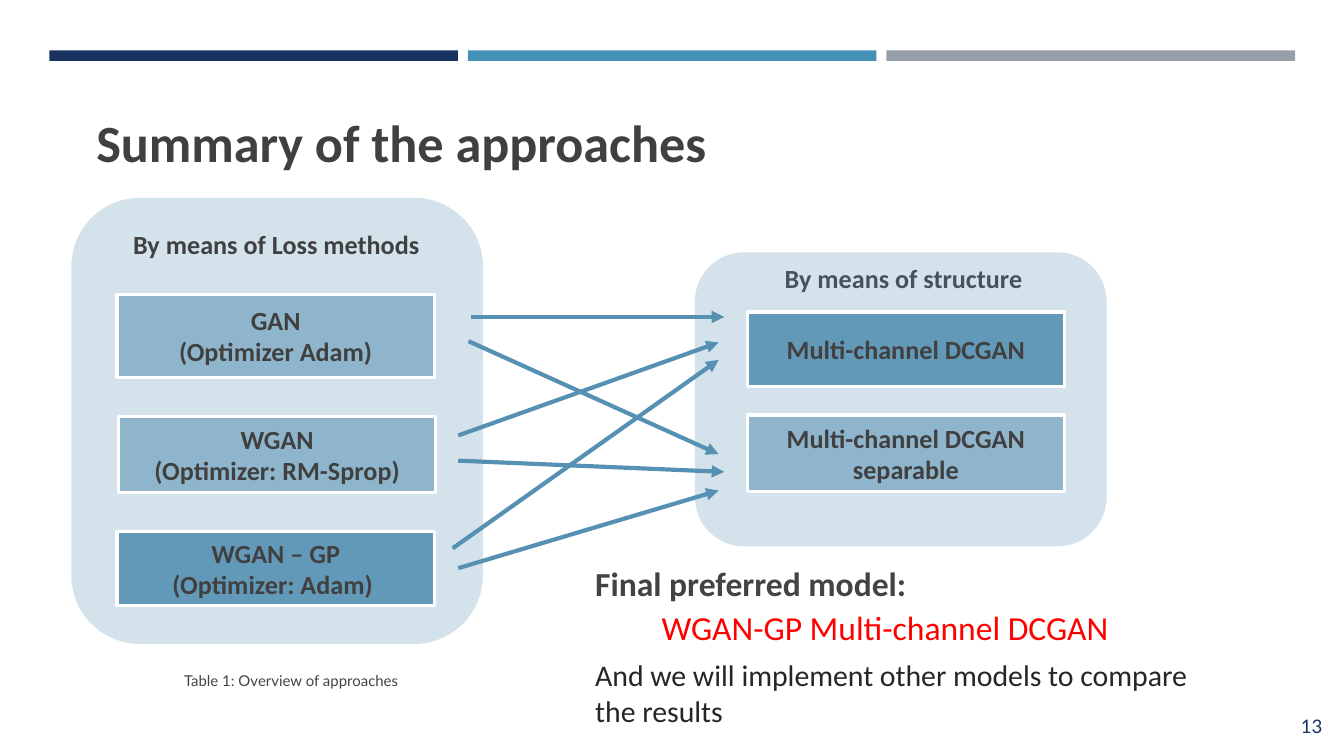
from lxml import etree
from pptx import Presentation
from pptx.dml.color import RGBColor
from pptx.enum.shapes import MSO_CONNECTOR as Link, MSO_SHAPE as Kind
from pptx.enum.text import MSO_ANCHOR as Anchor, PP_ALIGN as Align
from pptx.oxml.ns import qn
from pptx.util import Pt

BLUE, DARK, GRAY, NAVY = "5690B2", "404040", "434343", "1A3260"
HEAD = {"size": Pt(14), "bold": True}


def color(value):
    return RGBColor.from_string(value)


def write(frame, text, ink, font, name="Calibri", align=Align.LEFT, space=None, inset=0):
    for i, line in enumerate(text.split("\n")):
        para = frame.paragraphs[0] if i == 0 else frame.add_paragraph()
        para.alignment = align
        if space:
            para.line_spacing = space
        if inset:
            para._p.get_or_add_pPr().set("marL", str(Pt(inset)))
        run = para.add_run()
        run.text, run.font.name = line, name
        run.font.color.rgb = color(ink)
        for key, value in font.items():
            setattr(run.font, key, value)


def label(slide, box, text, ink, font, pad=3.6, anchor=Anchor.TOP, **style):
    frame = slide.shapes.add_textbox(*map(Pt, box)).text_frame
    form = {"word_wrap": True, "vertical_anchor": anchor,
            "margin_top": Pt(pad), "margin_bottom": Pt(pad)}
    for key, value in form.items():
        setattr(frame, key, value)
    write(frame, text, ink, font, **style)


def block(slide, box, fill, alpha=100, kind=Kind.RECTANGLE):
    """Add a borderless shape; alpha is its opacity in percent."""
    shape = slide.shapes.add_shape(kind, *map(Pt, box))
    shape.shadow.inherit = False
    shape.fill.solid()
    shape.fill.fore_color.rgb = color(fill)
    shape.line.fill.background()
    if alpha < 100:
        tint = shape._element.spPr.find(qn("a:solidFill"))[0]
        etree.SubElement(tint, qn("a:alpha"), val=str(alpha * 1000))
    return shape


def panel(slide, box):
    block(slide, box, BLUE, 25, Kind.ROUNDED_RECTANGLE)


def cards(slide, box, items):
    """Place cards of (x, y, height, opacity, text) relative to the panel box."""
    left, top = box[:2]
    for x, y, high, alpha, text in items:
        card = block(slide, (left + x, top + y, 170, high), BLUE, alpha)
        card.line.color.rgb = color("FFFFFF")
        card.line.width = Pt(1.75)
        frame = card.text_frame
        frame.word_wrap, frame.vertical_anchor = True, Anchor.MIDDLE
        write(frame, text, DARK, HEAD, align=Align.CENTER)


def losses(slide, box):
    panel(slide, box)
    label(slide, (box[0] + 26, box[1] + 13, 178.5, 24.5),
          "By means of Loss methods", DARK, HEAD)
    cards(slide, box, [
        (24.5, 51.7, 44.5, 55, "GAN\n(Optimizer Adam)"),
        (25.3, 117, 41, 55, "WGAN\n(Optimizer: RM-Sprop)"),
        (24.5, 178.6, 40, 89, "WGAN – GP\n(Optimizer: Adam) "),
    ])


def structure(slide, box):
    # The heading lies under the translucent panel, which tints it.
    label(slide, (box[0] + 41, box[1] + 2, 194.5, 24.5),
          "By means of structure", DARK, HEAD)
    panel(slide, box)
    cards(slide, box, [
        (28, 32, 40, 89, "Multi-channel DCGAN"),
        (28, 87.2, 41, 55, "Multi-channel DCGAN separable"),
    ])


def arrows(slide, box):
    left, top = box[:2]
    for x1, y1, x2, y2 in [
        (10, 0, 145.5, 0), (8.5, 13, 142.5, 73.5),
        (3, 63.5, 142.5, 13.7), (3, 77, 145.5, 83),
        (0, 124, 142.5, 23), (3, 134.6, 142.5, 93),
    ]:
        arrow = slide.shapes.add_connector(
            Link.STRAIGHT, Pt(left + x1), Pt(top + y1), Pt(left + x2), Pt(top + y2))
        arrow.line.color.rgb = color(BLUE)
        arrow.line.width = Pt(2.25)
        etree.SubElement(arrow.line._get_or_add_ln(), qn("a:tailEnd"), type="triangle")
        etree.SubElement(arrow._element.spPr, qn("a:effectLst"))


def bars(slide, box):
    left, top, wide, high = box
    gap = 5.3
    each = (wide - 2 * gap) / 3
    for i, fill in enumerate([NAVY, "4590B8", "969FA7"]):
        block(slide, (left + i * (each + gap), top, each, high), fill)


def verdict(slide, box):
    left, top = box[:2]
    for x, y, wide, high, text, ink, size, bold in [
        (0, 0, 269, 29, "Final preferred model:", GRAY, 18, True),
        (35.5, 23.8, 276, 29, "WGAN-GP Multi-channel DCGAN", "FF0000", 18, False),
        (0, 50.4, 354, 46, "And we will implement other models to compare the results",
         "262626", 16, False),
    ]:
        label(slide, (left + x, top + y, wide, high), text, ink,
              {"size": Pt(size), "bold": bold}, inset=10.8)


def main():
    deck = Presentation()
    deck.slide_width, deck.slide_height = Pt(720), Pt(405)
    slide = deck.slides.add_slide(deck.slide_layouts[6])
    bars(slide, (26.4, 27, 667.4, 5.6))
    label(slide, (33, 47, 441.5, 57.5), "Summary of the approaches", DARK,
          {"size": Pt(28), "bold": True}, pad=7.2, space=1.15, inset=11.5)
    losses(slide, (38.2, 106, 220.5, 239))
    structure(slide, (372.3, 135.2, 220.5, 157.5))
    arrows(slide, (242.5, 169.8, 145.5, 134.6))
    verdict(slide, (301, 298, 354, 96.4))
    label(slide, (91.5, 353, 150.5, 20), "Table 1: Overview of approaches", GRAY,
          {"size": Pt(8)}, pad=7.2, name="Lato", space=1.15)
    label(slide, (672.5, 373.7, 43, 31), "13", NAVY, {"size": Pt(10)},
          pad=7.2, anchor=Anchor.MIDDLE, name="Lato", align=Align.RIGHT)
    deck.save("out.pptx")


if __name__ == "__main__":
    main()
